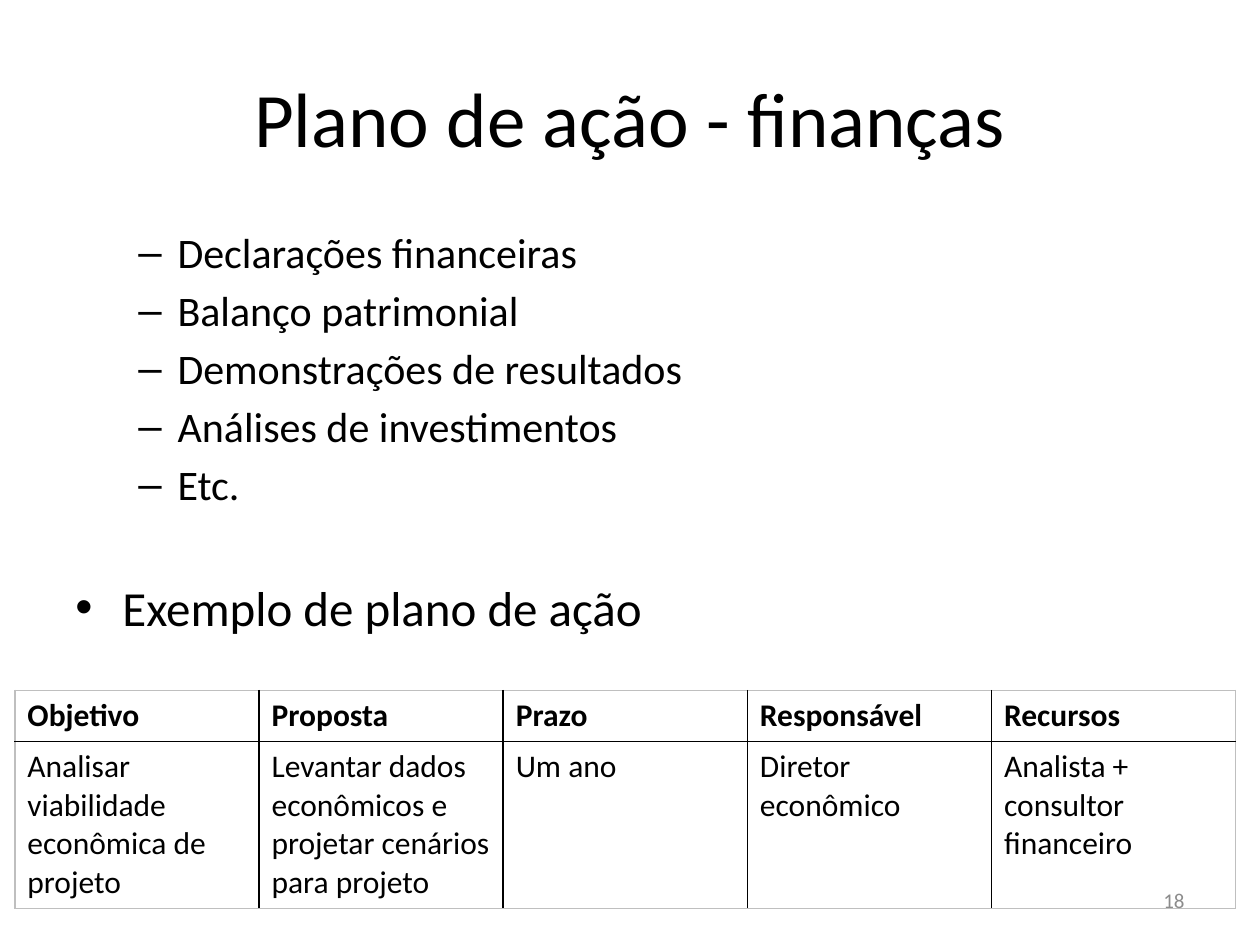
from lxml import etree
from pptx import Presentation
from pptx.dml.color import RGBColor
from pptx.enum.text import MSO_ANCHOR, PP_ALIGN
from pptx.oxml.ns import qn
from pptx.util import Cm, Pt

MIDDLE = MSO_ANCHOR.MIDDLE
TOP = MSO_ANCHOR.TOP
LEFT = PP_ALIGN.LEFT
CENTER = PP_ALIGN.CENTER
RIGHT = PP_ALIGN.RIGHT

BLACK = RGBColor(0x00, 0x00, 0x00)
GREY = RGBColor(0x8C, 0x8C, 0x8C)
EDGE_GREY = RGBColor(0xBF, 0xBF, 0xBF)
FONT = "Calibri"

TOPICS = [
    "Declarações financeiras",
    "Balanço patrimonial",
    "Demonstrações de resultados",
    "Análises de investimentos",
    "Etc.",
]
PLAN = [
    ["Objetivo", "Proposta", "Prazo", "Responsável", "Recursos"],
    [
        "Analisar viabilidade econômica de projeto",
        "Levantar dados econômicos e projetar cenários para projeto",
        "Um ano",
        "Diretor econômico",
        "Analista + consultor financeiro",
    ],
]


def add_run(paragraph, text, size, color=BLACK, bold=False):
    """Append one formatted run to a paragraph."""
    run = paragraph.add_run()
    run.text = text
    run.font.name = FONT
    run.font.size = Pt(size)
    run.font.bold = bold
    run.font.color.rgb = color


def add_text_frame(slide, box, anchor):
    """Add a wrapping text box and return its text frame."""
    text_frame = slide.shapes.add_textbox(*box).text_frame
    text_frame.word_wrap = True
    text_frame.vertical_anchor = anchor
    return text_frame


def add_line(slide, box, text, size, alignment, color=BLACK):
    """Add a single line of text centred vertically in its box."""
    paragraph = add_text_frame(slide, box, MIDDLE).paragraphs[0]
    paragraph.alignment = alignment
    add_run(paragraph, text, size, color)


def set_bullet(paragraph, character, margin, hanging):
    """Give a paragraph a bullet character and a hanging indent."""
    properties = paragraph._p.get_or_add_pPr()
    properties.set("marL", str(margin))
    properties.set("indent", str(-hanging))
    etree.SubElement(properties, qn("a:buFont")).set("typeface", "Arial")
    etree.SubElement(properties, qn("a:buChar")).set("char", character)


def add_body(slide, box):
    """Add the dashed topics followed by the example heading."""
    text_frame = add_text_frame(slide, box, TOP)
    for index, topic in enumerate(TOPICS):
        paragraph = text_frame.add_paragraph() if index else text_frame.paragraphs[0]
        paragraph.alignment = LEFT
        paragraph.space_before = Pt(4.3 if index else 0)
        set_bullet(paragraph, "–", Cm(2.06), Cm(0.79))
        add_run(paragraph, topic, 24)
    example = text_frame.add_paragraph()
    example.alignment = LEFT
    example.space_before = Pt(39)
    set_bullet(example, "•", Cm(0.95), Cm(0.95))
    add_run(example, "Exemplo de plano de ação", 28)


def set_borders(cell, colors):
    """Draw the four cell borders in the given colours."""
    properties = cell._tc.get_or_add_tcPr()
    for position, (side, color) in enumerate(colors.items()):
        line = etree.Element(qn(f"a:{side}"), w=str(Pt(1)))
        fill = etree.SubElement(line, qn("a:solidFill"))
        etree.SubElement(fill, qn("a:srgbClr")).set("val", str(color))
        properties.insert(position, line)


def add_plan_table(slide, box, header_height):
    """Add the action plan table with black inner and grey outer lines."""
    left, top, width, height = box
    row_count, column_count = len(PLAN), len(PLAN[0])
    table = slide.shapes.add_table(row_count, column_count, left, top, width, height).table
    table.first_row = False
    table.horz_banding = False
    table.rows[0].height = header_height
    table.rows[1].height = height - header_height
    for row, texts in enumerate(PLAN):
        for column, text in enumerate(texts):
            cell = table.cell(row, column)
            cell.fill.background()
            add_run(cell.text_frame.paragraphs[0], text, 18, bold=row == 0)
            outer = {
                "lnL": column == 0,
                "lnR": column == column_count - 1,
                "lnT": row == 0,
                "lnB": row == row_count - 1,
            }
            set_borders(cell, {side: EDGE_GREY if edge else BLACK for side, edge in outer.items()})


def main():
    """Build and save the slide."""
    presentation = Presentation()
    presentation.slide_width = Cm(25.4)
    presentation.slide_height = Cm(19.05)
    slide = presentation.slides.add_slide(presentation.slide_layouts[6])
    margin, content_width = Cm(1.27), Cm(22.86)
    add_line(slide, (margin, Cm(0.76), content_width, Cm(3.18)), "Plano de ação - finanças", 44, CENTER)
    add_body(slide, (margin, Cm(4.45), content_width, Cm(12.57)))
    add_plan_table(slide, (Cm(0.3), Cm(13.92), Cm(24.61), Cm(4.39)), Cm(1.03))
    add_line(slide, (Cm(18.2), Cm(17.65), Cm(5.93), Cm(1.01)), "18", 12, RIGHT, GREY)
    presentation.save("out.pptx")


if __name__ == "__main__":
    main()
